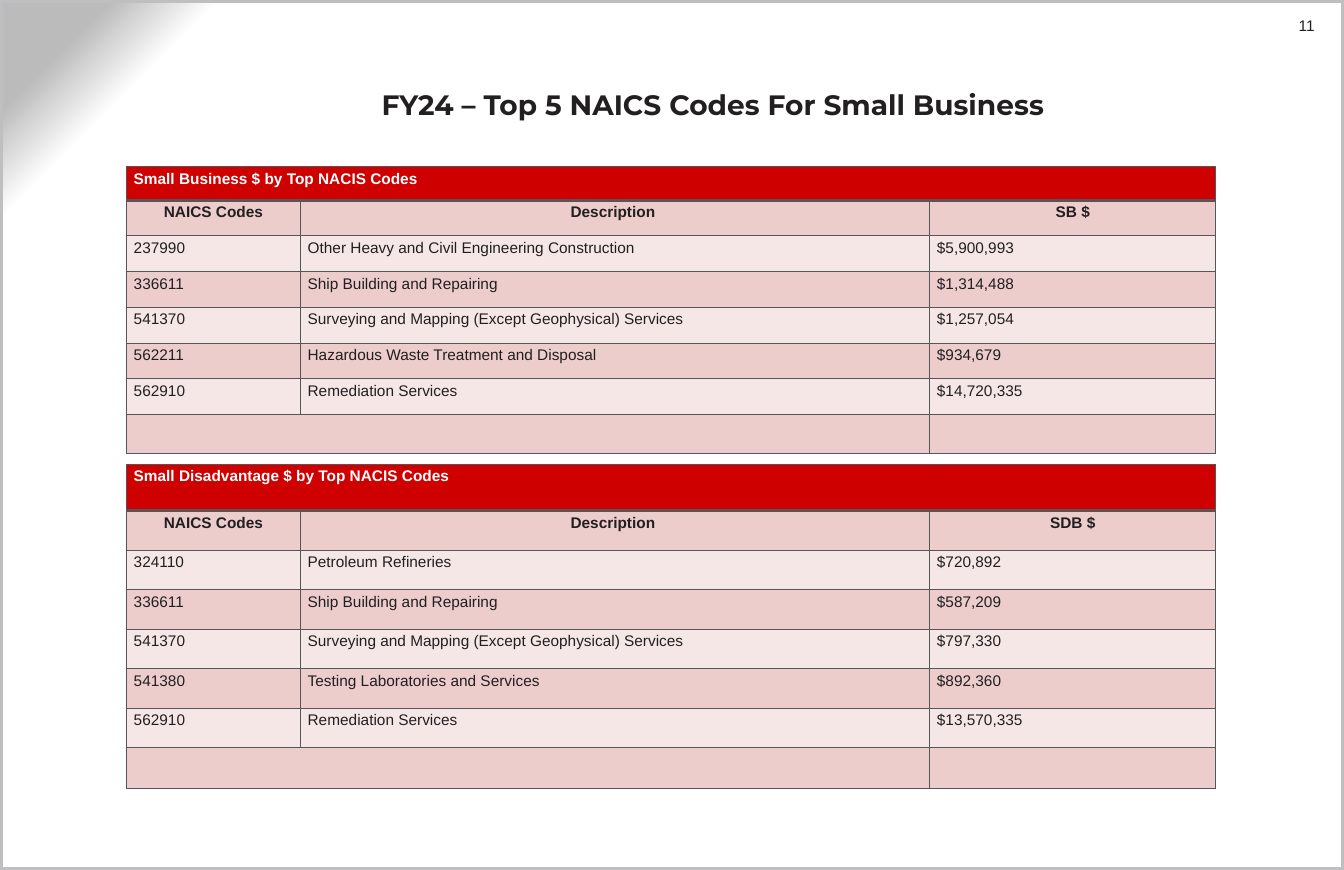
import pptx
import pptx.util
import pptx.oxml
import pptx.oxml.ns
import pptx.dml.color
import pptx.enum.shapes
import pptx.enum.text
from lxml import etree

Pt = pptx.util.Pt
ALIGN = pptx.enum.text.PP_ALIGN
ANCHOR = pptx.enum.text.MSO_ANCHOR

COLORS = {
    "ink": "221F20",
    "white": "FFFFFF",
    "frame": "BFBFC2",
    "corner": "BBBBBC",
    "border": "565557",
    "header": "CF0000",
    "dark_band": "EDCCCC",
    "light_band": "F6E7E7",
}
FONTS = {
    "title": {"name": "Montserrat", "size": Pt(25.5), "bold": True},
    "bold": {"name": "Arial", "size": Pt(14), "bold": True},
    "body": {"name": "Arial", "size": Pt(14), "bold": False},
}
CELL = {
    "margin_left": Pt(6.6),
    "margin_right": Pt(6.6),
    "margin_top": Pt(3.3),
    "margin_bottom": Pt(3.3),
    "vertical_anchor": ANCHOR.TOP,
}
COLUMNS = [158.4, 573.1, 260.6]
TABLES = [
    {
        "top": 151.9,
        "heights": [30.4] + [32.5] * 6 + [35.5],
        "heading": "Small Business $ by Top NACIS Codes",
        "amount": "SB $",
        "rows": [
            ["237990", "Other Heavy and Civil Engineering Construction", "$5,900,993"],
            ["336611", "Ship Building and Repairing", "$1,314,488"],
            ["541370", "Surveying and Mapping (Except Geophysical) Services", "$1,257,054"],
            ["562211", "Hazardous Waste Treatment and Disposal", "$934,679"],
            ["562910", "Remediation Services", "$14,720,335"],
        ],
    },
    {
        "top": 422.6,
        "heights": [42.5] + [35.9] * 6 + [37.4],
        "heading": "Small Disadvantage $ by Top NACIS Codes",
        "amount": "SDB $",
        "rows": [
            ["324110", "Petroleum Refineries", "$720,892"],
            ["336611", "Ship Building and Repairing", "$587,209"],
            ["541370", "Surveying and Mapping (Except Geophysical) Services", "$797,330"],
            ["541380", "Testing Laboratories and Services", "$892,360"],
            ["562910", "Remediation Services", "$13,570,335"],
        ],
    },
]


def rgb(color):
    return pptx.dml.color.RGBColor.from_string(COLORS[color])


def apply(obj, values):
    for name, value in values.items():
        setattr(obj, name, value)


def write(tf, text, font, color="ink", align=ALIGN.LEFT):
    p = tf.paragraphs[0]
    p.alignment = align
    r = p.add_run()
    r.text = text
    apply(r.font, FONTS[font])
    r.font.color.rgb = rgb(color)


def set_background(s):
    ns = pptx.oxml.ns.nsdecls("p", "a")
    s.element.cSld.insert(0, pptx.oxml.parse_xml(
        f'<p:bg {ns}><p:bgPr><a:gradFill rotWithShape="1"><a:gsLst>'
        f'<a:gs pos="85000"><a:srgbClr val="{COLORS["white"]}"/></a:gs>'
        f'<a:gs pos="90000"><a:srgbClr val="{COLORS["white"]}"><a:alpha val="35000"/></a:srgbClr></a:gs>'
        f'<a:gs pos="95000"><a:srgbClr val="{COLORS["corner"]}"/></a:gs></a:gsLst>'
        '<a:path path="circle"><a:fillToRect l="100000" t="100000"/></a:path>'
        '</a:gradFill><a:effectLst/></p:bgPr></p:bg>'))


def add_frame(s, width, height):
    sp = s.shapes.add_shape(pptx.enum.shapes.MSO_SHAPE.RECTANGLE, 0, 0, width, height)
    sp.shadow.inherit = False
    sp.fill.background()
    sp.line.color.rgb = rgb("frame")
    sp.line.width = Pt(6)


def add_page_number(s, text):
    sp = s.shapes.add_textbox(Pt(1141.9), Pt(15.1), Pt(55.4), Pt(17.3))
    tf = sp.text_frame
    apply(tf, {"word_wrap": True, "margin_left": Pt(7.2), "margin_right": 0,
               "margin_top": 0, "margin_bottom": 0})
    write(tf, text, "body", align=ALIGN.RIGHT)


def set_title(s, text):
    sp = s.shapes.title
    apply(sp, {"left": Pt(159.8), "top": Pt(61.9), "width": Pt(975.6), "height": Pt(65.5)})
    tf = sp.text_frame
    apply(tf, {"word_wrap": True, "vertical_anchor": ANCHOR.MIDDLE, "margin_left": Pt(3.6),
               "margin_right": 0, "margin_top": 0, "margin_bottom": 0})
    write(tf, text, "title", align=ALIGN.CENTER)


def set_borders(cell, bottom):
    tcPr = cell._tc.get_or_add_tcPr()
    for side, width in {"lnL": 1, "lnR": 1, "lnT": 1, "lnB": bottom}.items():
        ln = etree.SubElement(tcPr, pptx.oxml.ns.qn(f"a:{side}"), w=str(Pt(width)))
        fill = etree.SubElement(ln, pptx.oxml.ns.qn("a:solidFill"))
        etree.SubElement(fill, pptx.oxml.ns.qn("a:srgbClr"), val=COLORS["border"])


def format_cell(cell, color, bottom=1):
    apply(cell, CELL)
    set_borders(cell, bottom)
    cell.fill.solid()
    cell.fill.fore_color.rgb = rgb(color)


def add_code_table(s, top, heights, heading, amount, rows):
    table = s.shapes.add_table(len(heights), len(COLUMNS), Pt(115.2), Pt(top),
                               Pt(sum(COLUMNS)), Pt(sum(heights))).table
    apply(table, {"first_row": False, "horz_banding": False})
    for column, width in zip(table.columns, COLUMNS):
        column.width = Pt(width)
    for i, height in enumerate(heights):
        table.rows[i].height = Pt(height)
        band = "dark_band" if i % 2 else "light_band"
        for cell in table.rows[i].cells:
            format_cell(cell, band if i else "header", 1 if i else 3)

    table.cell(0, 0).merge(table.cell(0, 2))
    table.cell(7, 0).merge(table.cell(7, 1))
    write(table.cell(0, 0).text_frame, heading, "bold", "white")
    for j, label in enumerate(["NAICS Codes", "Description ", amount]):
        write(table.cell(1, j).text_frame, label, "bold", align=ALIGN.CENTER)
    for i, row in enumerate(rows, 2):
        for j, text in enumerate(row):
            write(table.cell(i, j).text_frame, text, "body")


def main():
    prs = pptx.Presentation()
    apply(prs, {"slide_width": Pt(1224), "slide_height": Pt(792)})
    s = prs.slides.add_slide(prs.slide_layouts[5])
    set_background(s)
    add_page_number(s, "11")
    add_frame(s, prs.slide_width, prs.slide_height)
    set_title(s, "FY24 – Top 5 NAICS Codes For Small Business")
    for spec_values in TABLES:
        add_code_table(s, **spec_values)
    prs.save("out.pptx")


if __name__ == "__main__":
    main()
